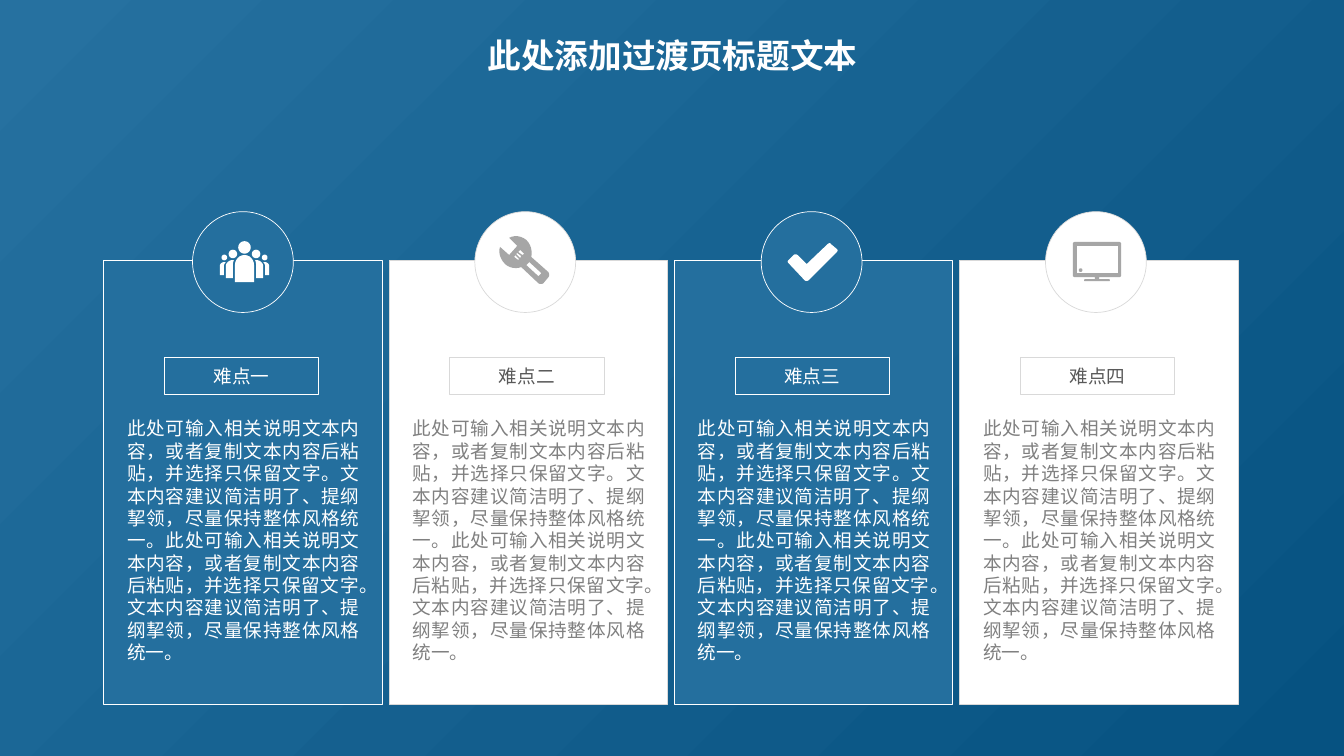
import math
from pptx import Presentation, util as u
from pptx.dml.color import RGBColor
from pptx.enum import shapes, text
from pptx.oxml.ns import qn
from lxml import etree

# Content
TITLE = "此处添加过渡页标题文本"
SENTENCES = ("此处可输入相关说明文本内容，或者复制文本内容后粘贴，并选择只保留文字。"
             "文本内容建议简洁明了、提纲挈领，尽量保持整体风格统一。")
DESCRIPTION = SENTENCES * 2
# label, palette, icon, left of the round badge
CARDS = [
    ("难点一", "blue", "people", 1.91),
    ("难点二", "white", "wrench", 4.71),
    ("难点三", "blue", "check", 7.55),
    ("难点四", "white", "monitor", 10.37),
]

# Look
COLORS = {"sky": "2671A0", "navy": "065281", "title": "FFFFFF"}
PALETTES = {
    "blue": {"fill": "246F9E", "line": "FFFFFF", "icon": "FFFFFF",
             "label": "FFFFFF", "body": "FFFFFF"},
    "white": {"fill": "FFFFFF", "line": "D9D9D9", "icon": "A6A6A6",
              "label": "595959", "body": "808080"},
}
CJK_FONT = "Noto Sans CJK SC"

# Grid in inches: one column per card
SLIDE_W, SLIDE_H = 13.33, 7.5
PITCH = 2.83
CARD = (1.03, 2.58, 2.76, 4.41)
LABEL = (1.63, 3.55, 1.53, 0.36)
BODY = (1.26, 4.14, 2.31, 2.47)
BADGE_TOP, BADGE_SIZE = 2.1, 1
TITLE_BOX = (4.28, 0.29, 4.78, 0.5)


# Icon outlines, in hundredths of an inch from the badge centre.
# Two numbers make a corner, six make a curve.
def disc(x, y, r, steps=24):
    angles = [2 * math.pi * i / steps for i in range(steps)]
    return [(x + r * math.cos(a), y + r * math.sin(a)) for a in angles]


def flip(outline, axis):
    return [tuple(2 * axis - v if i % 2 == 0 else v for i, v in enumerate(p))
            for p in outline]


AXIS = 1.5
side_people = [
    disc(13, -8, 4.2),
    disc(21.5, -4.5, 2.8),
    [(13, 16), (13, 3), (13, 1, 12.5, -1, 12, -2), (13, -2),
     (17, -2, 20, 1, 20, 4), (20, 16)],
    [(22, 13), (22, 4), (22, 3, 21, 1, 20, 0), (21.5, 0),
     (24, 0, 26, 2, 26, 4), (26, 13)],
]
ICONS = {
    "people": side_people + [flip(o, AXIS) for o in side_people] + [
        disc(AXIS, -14.5, 6.2),
        [(-8, 20), (-8, 3), (-8, -2, -4, -7, AXIS, -7),
         (7, -7, 11, -2, 11, 3), (11, 20)],
    ],
    "wrench": [
        [(1, -22), (-4, -26, -11, -27, -16, -24), (-8, -16), (-16, -7), (-25, -15),
         (-27, -10, -25, -3, -20, 2), (-16, 6, -9, 7, -4, 5), (13, 21),
         (14, 22, 17, 22, 18, 21), (23, 15), (24, 14, 24, 12, 23, 10), (6, -5),
         (7, -11, 6, -17, 1, -22)],
        [(-7, -10), (-5, -12), (-1, -8), (-3, -7)],
        [(-9, -8), (-8, -9), (-4, -6), (-5, -4)],
        [(-11, -5), (-10, -7), (-6, -3), (-7, -2)],
        [(16, 11), (13, 14), (1, 3), (4, 0)],
    ],
    "check": [
        [(25, -10), (-3, 18), (-4, 19, -6, 19, -7, 18), (-23, 1),
         (-24, 0, -24, -1, -23, -2), (-18, -7), (-17, -8, -15, -8, -14, -7),
         (-5, 2), (16, -18), (17, -19, 19, -19, 19, -18), (25, -13),
         (26, -12, 26, -11, 25, -10)],
    ],
    "monitor": [
        [(-21, -20), (23, -20), (24, -20, 25, -19, 25, -18), (25, 13),
         (25, 14, 24, 15, 23, 15), (3, 15), (3, 17), (13, 17),
         (14, 17, 14, 19, 13, 19), (-11, 19), (-12, 19, -12, 17, -11, 17),
         (-1, 17), (-1, 15), (-21, 15), (-22, 15, -23, 14, -23, 13), (-23, -18),
         (-23, -19, -22, -20, -21, -20)],
        [(-19, -16), (22, -16), (22, 11), (-19, 11)],
        disc(-15.2, 8, 1.8),
    ],
}


# Helpers
def rgb(value):
    return RGBColor.from_string(value)


def inches(box):
    return [u.Inches(v) for v in box]


def in_column(box, column):
    return (box[0] + column * PITCH, *box[1:])


def paint(shape, fill, line=None):
    shape.shadow.inherit = False
    shape.fill.solid()
    shape.fill.fore_color.rgb = rgb(fill)
    if line:
        shape.line.color.rgb = rgb(line)
        shape.line.width = u.Pt(0.5)
    else:
        shape.line.fill.background()


def write(shape, words, color, frame, paragraph, font):
    tf = shape.text_frame
    tf.text = words
    para = tf.paragraphs[0]
    run = para.runs[0]
    for target, values in ((tf, frame), (para, paragraph), (run.font, font)):
        for key, value in values.items():
            setattr(target, key, value)
    run.font.color.rgb = rgb(color)
    east_asian = etree.SubElement(run.font._element, qn("a:ea"))
    east_asian.set("typeface", CJK_FONT)


def flatten(outline, steps=6):
    points = []
    for p in outline:
        if len(p) == 2:
            points.append(p)
            continue
        nodes = [points[-1], p[:2], p[2:4], p[4:]]
        for t in (i / steps for i in range(1, steps + 1)):
            weights = ((1 - t) ** 3, 3 * t * (1 - t) ** 2, 3 * t * t * (1 - t), t ** 3)
            points.append(tuple(sum(w * n[axis] for w, n in zip(weights, nodes))
                                for axis in (0, 1)))
    return [(u.Inches(x / 100), u.Inches(y / 100)) for x, y in points]


def draw_icon(outlines, center_x, center_y, color):
    first, *others = [flatten(o) for o in outlines]
    builder = slide.shapes.build_freeform(*first[0])
    builder.add_line_segments(first[1:], close=True)
    for contour in others:
        builder.move_to(*contour[0])
        builder.add_line_segments(contour[1:], close=True)
    paint(builder.convert_to_shape(u.Inches(center_x), u.Inches(center_y)), color)


def add_panel(box, palette, kind=shapes.MSO_SHAPE.ROUNDED_RECTANGLE):
    panel = slide.shapes.add_shape(kind, *inches(box))
    if kind == shapes.MSO_SHAPE.ROUNDED_RECTANGLE:
        panel.adjustments[0] = 0
    paint(panel, palette["fill"], palette["line"])
    return panel


# Slide and background
prs = Presentation()
prs.slide_width, prs.slide_height = inches((SLIDE_W, SLIDE_H))
slide = prs.slides.add_slide(prs.slide_layouts[5])
backdrop = slide.background.fill
backdrop.gradient()
backdrop.gradient_angle = 315
for stop, shade in zip(backdrop.gradient_stops, ("sky", "navy")):
    stop.color.rgb = rgb(COLORS[shade])

# Title
heading = slide.shapes.title
heading.left, heading.top, heading.width, heading.height = inches(TITLE_BOX)
write(heading, TITLE, COLORS["title"],
      {"vertical_anchor": text.MSO_ANCHOR.TOP, "word_wrap": True,
       "auto_size": text.MSO_AUTO_SIZE.NONE},
      {"alignment": text.PP_ALIGN.CENTER, "line_spacing": u.Pt(29)},
      {"size": u.Pt(24), "bold": True, "name": CJK_FONT})

# Cards
for column, (label, palette_name, icon, badge_left) in enumerate(CARDS):
    palette = PALETTES[palette_name]
    add_panel(in_column(CARD, column), palette)
    add_panel((badge_left, BADGE_TOP, BADGE_SIZE, BADGE_SIZE), palette,
              shapes.MSO_SHAPE.OVAL)
    draw_icon(ICONS[icon], badge_left + BADGE_SIZE / 2, BADGE_TOP + BADGE_SIZE / 2,
              palette["icon"])
    write(add_panel(in_column(LABEL, column), palette), label, palette["label"],
          {"vertical_anchor": text.MSO_ANCHOR.MIDDLE},
          {"alignment": text.PP_ALIGN.CENTER},
          {"size": u.Pt(13.3), "name": "Arial Narrow"})
    write(slide.shapes.add_textbox(*inches(in_column(BODY, column))),
          DESCRIPTION, palette["body"],
          {"word_wrap": True, "margin_left": 0, "margin_top": 0,
           "margin_right": 0, "margin_bottom": 0},
          {"alignment": text.PP_ALIGN.JUSTIFY, "line_spacing": u.Pt(16)},
          {"size": u.Pt(13.3), "name": "Arial"})

prs.save("out.pptx")
